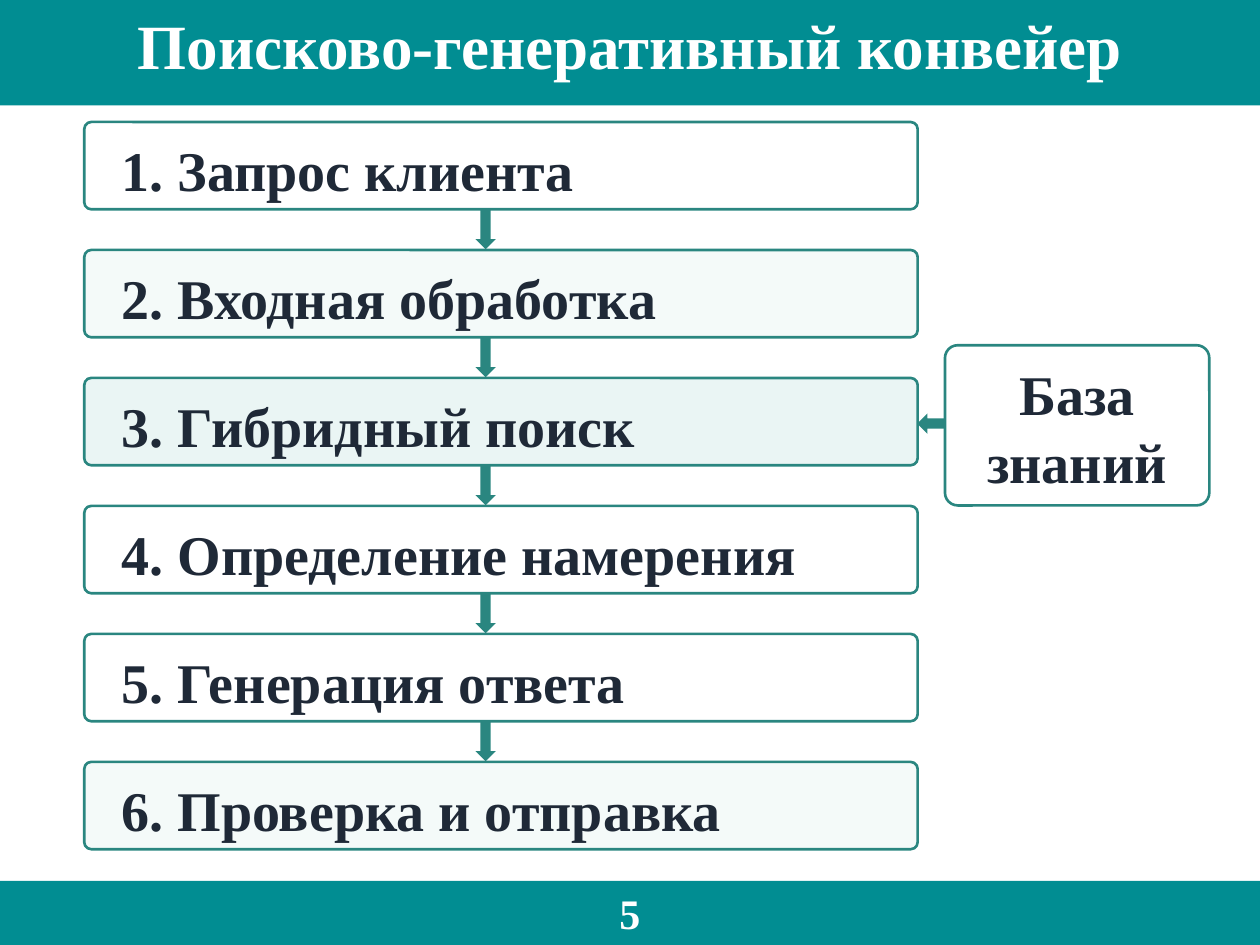
from pptx import Presentation
from pptx.dml.color import RGBColor
from pptx.enum.shapes import MSO_SHAPE as SHAPE
from pptx.enum.text import MSO_ANCHOR as ANCHOR, MSO_AUTO_SIZE as AUTO, PP_ALIGN as ALIGN
from pptx.util import Cm, Pt

BAND, TEAL, INK, WHITE = "018D92", "2A8680", "1F2937", "FFFFFF"


def paint(s, fill, line=None):
    s.fill.solid()
    s.fill.fore_color.rgb = RGBColor.from_string(fill)
    if line:
        s.line.color.rgb = RGBColor.from_string(line)
        s.line.width = Pt(1.5)
    else:
        s.line.fill.background()


def write(s, text, size, color, align, anchor, insets=(0.25, 0.13, 0.25, 0.13)):
    tf = s.text_frame
    tf.word_wrap = True
    tf.auto_size = AUTO.SHAPE_TO_FIT_TEXT
    tf.vertical_anchor = anchor
    tf.margin_left, tf.margin_top, tf.margin_right, tf.margin_bottom = map(Cm, insets)
    p = tf.paragraphs[0]
    p.alignment = align
    r = p.add_run()
    r.text = text
    r.font.name, r.font.size, r.font.bold = "Times New Roman", Pt(size), True
    r.font.color.rgb = RGBColor.from_string(color)
    return p


prs = Presentation()
prs.slide_width, prs.slide_height = Cm(25.4), Cm(19.05)
slide = prs.slides.add_slide(prs.slide_layouts[5])
shapes = slide.shapes

# Title band
title = shapes.title
title.left, title.top, title.width, title.height = Cm(0), Cm(0), Cm(25.4), Cm(1.8)
paint(title, BAND)
write(title, "Поисково-генеративный конвейер", 36, WHITE, ALIGN.CENTER, ANCHOR.TOP)

# Footer band with the page number
footer = shapes.add_shape(SHAPE.RECTANGLE, Cm(0), Cm(17.76), Cm(25.4), Cm(1.29))
footer.shadow.inherit = False
paint(footer, BAND)
write(footer, "5", 24, WHITE, ALIGN.CENTER, ANCHOR.TOP)

# Pipeline steps, evenly stacked
steps = [
    ("1. Запрос клиента", WHITE),
    ("2. Входная обработка", "F4FAF9"),
    ("3. Гибридный поиск", "EAF5F4"),
    ("4. Определение намерения", WHITE),
    ("5. Генерация ответа", WHITE),
    ("6. Проверка и отправка", "F4FAF9"),
]
left, top, width, height, pitch = 1.7, 2.46, 16.8, 1.76, 2.58
for i, (text, fill) in enumerate(steps):
    s = shapes.add_shape(SHAPE.ROUNDED_RECTANGLE, Cm(left), Cm(top + i * pitch),
                         Cm(width), Cm(height))
    s.shadow.inherit = False
    s.adjustments[0] = 0.08
    paint(s, fill, TEAL)
    p = write(s, text, 32, INK, ALIGN.LEFT, ANCHOR.MIDDLE, (0.71, 0.2, 0.56, 0.13))
    p.line_spacing, p.space_after = 1.05, Pt(2)

# Knowledge base
base = shapes.add_shape(SHAPE.ROUNDED_RECTANGLE, Cm(19.05), Cm(6.96), Cm(5.33), Cm(3.23))
base.shadow.inherit = False
base.adjustments[0] = 0.08
paint(base, WHITE, TEAL)
p = write(base, "База знаний", 32, INK, ALIGN.CENTER, ANCHOR.MIDDLE, (0.48, 0.2, 0.48, 0.13))
p.space_after = Pt(2)

# Arrows: centre x, centre y, length, rotation
gap = pitch - height
arrows = [(9.79, top + height + gap / 2 + i * pitch, 0.79, 270)
          for i in range(len(steps) - 1)]
arrows.append((18.77, 8.54, 0.56, 0))
thick = 0.41
for x, y, length, turn in arrows:
    s = shapes.add_shape(SHAPE.LEFT_ARROW, Cm(x - length / 2), Cm(y - thick / 2),
                         Cm(length), Cm(thick))
    s.shadow.inherit = False
    s.rotation = turn
    paint(s, TEAL)

prs.save("out.pptx")
